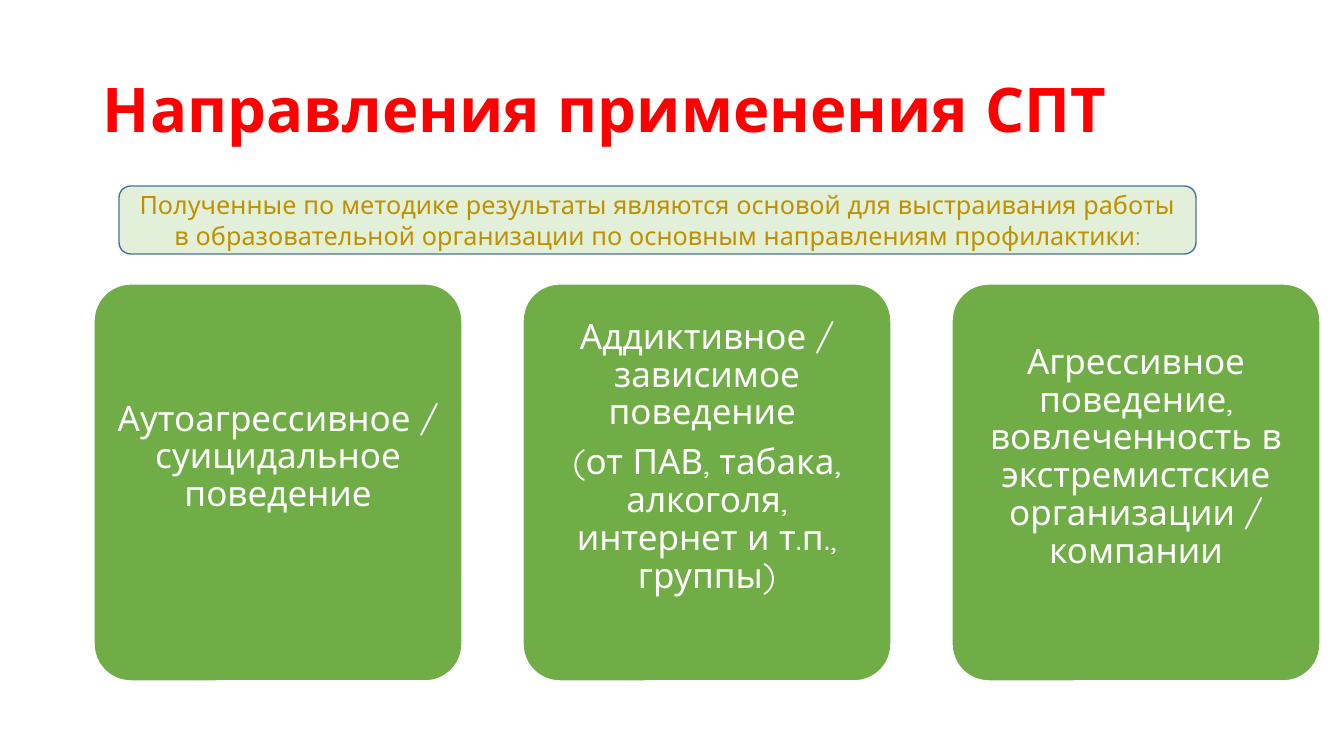
from dataclasses import dataclass

from pptx import Presentation
from pptx import util as u
from pptx.dml.color import RGBColor
from pptx.enum import shapes, text

EMU_PER_INCH = 914400
PX_PER_INCH = 100.8


@dataclass(frozen=True)
class Theme:
    font: str = "Quicksand"
    red: str = "FF0000"
    green: str = "70AD47"
    pale_green: str = "E2F0D9"
    blue: str = "43739E"
    gold: str = "BF9000"
    white: str = "FFFFFF"
    title_size: int = 44
    card_size: int = 25
    banner_size: int = 18
    card_gap: float = 8.75


@dataclass(frozen=True)
class Area:
    left: int
    top: int
    width: int
    height: int


@dataclass(frozen=True)
class Style:
    size: int
    color: str
    bold: bool = False
    align: text.PP_ALIGN = text.PP_ALIGN.CENTER
    line_spacing: float = 0.9
    gap: float = 0
    margins: tuple[int, int, int, int] = (10, 5, 10, 5)


@dataclass(frozen=True)
class Panel:
    area: Area
    fill: str
    line: str
    radius: float
    style: Style
    lines: tuple[str, ...]


THEME = Theme()
TITLE_AREA = Area(93, 40, 1159, 146)
FIRST_CARD = Area(94, 284, 368, 397)
CARD_PITCH = 429
TITLE_STYLE = Style(THEME.title_size, THEME.red, bold=True, align=text.PP_ALIGN.LEFT)
CARD_STYLE = Style(THEME.card_size, THEME.white, gap=THEME.card_gap,
                   margins=(10, 10, 10, 60))
BANNER = Panel(
    Area(119, 186, 1077, 68), THEME.pale_green, THEME.blue, 0.17,
    Style(THEME.banner_size, THEME.gold, line_spacing=1.0),
    ("Полученные по методике результаты являются основой для выстраивания работы "
     "в образовательной организации по основным направлениям профилактики:",),
)
CARD_TEXTS = (
    ("Аутоагрессивное / суицидальное поведение",),
    ("Аддиктивное / зависимое поведение ",
     "(от ПАВ, табака, алкоголя, интернет и т.п., группы)"),
    ("Агрессивное поведение, вовлеченность в экстремистские организации / компании",),
)


def px(value: int) -> u.Emu:
    return u.Emu(round(value * EMU_PER_INCH / PX_PER_INCH))


def place(area: Area) -> tuple[u.Emu, ...]:
    return px(area.left), px(area.top), px(area.width), px(area.height)


def color(value: str) -> RGBColor:
    return RGBColor.from_string(value)


def write(box, lines: tuple[str, ...], style: Style) -> None:
    frame = box.text_frame
    frame.word_wrap = True
    frame.vertical_anchor = text.MSO_ANCHOR.MIDDLE
    (frame.margin_left, frame.margin_top,
     frame.margin_right, frame.margin_bottom) = map(px, style.margins)
    for index, line in enumerate(lines):
        para = frame.add_paragraph() if index else frame.paragraphs[0]
        para.text = line
        para.alignment = style.align
        para.line_spacing = style.line_spacing
        if index:
            para.space_before = u.Pt(style.gap)
        para.font.name = THEME.font
        para.font.size = u.Pt(style.size)
        para.font.bold = style.bold
        para.font.color.rgb = color(style.color)


def draw_panel(page, panel: Panel) -> None:
    box = page.shapes.add_shape(shapes.MSO_SHAPE.ROUNDED_RECTANGLE, *place(panel.area))
    box.adjustments[0] = panel.radius
    box.shadow.inherit = False
    box.fill.solid()
    box.fill.fore_color.rgb = color(panel.fill)
    box.line.color.rgb = color(panel.line)
    box.line.width = u.Pt(1)
    write(box, panel.lines, panel.style)


def card(column: int, lines: tuple[str, ...]) -> Panel:
    area = Area(FIRST_CARD.left + column * CARD_PITCH, FIRST_CARD.top,
                FIRST_CARD.width, FIRST_CARD.height)
    return Panel(area, THEME.green, THEME.white, 0.1, CARD_STYLE, lines)


def main() -> None:
    deck = Presentation()
    deck.slide_width, deck.slide_height = px(1344), px(756)
    page = deck.slides.add_slide(deck.slide_layouts[6])
    title = page.shapes.add_textbox(*place(TITLE_AREA))
    write(title, ("Направления применения СПТ",), TITLE_STYLE)
    for column, lines in enumerate(CARD_TEXTS):
        draw_panel(page, card(column, lines))
    draw_panel(page, BANNER)
    deck.save("out.pptx")


if __name__ == "__main__":
    main()
